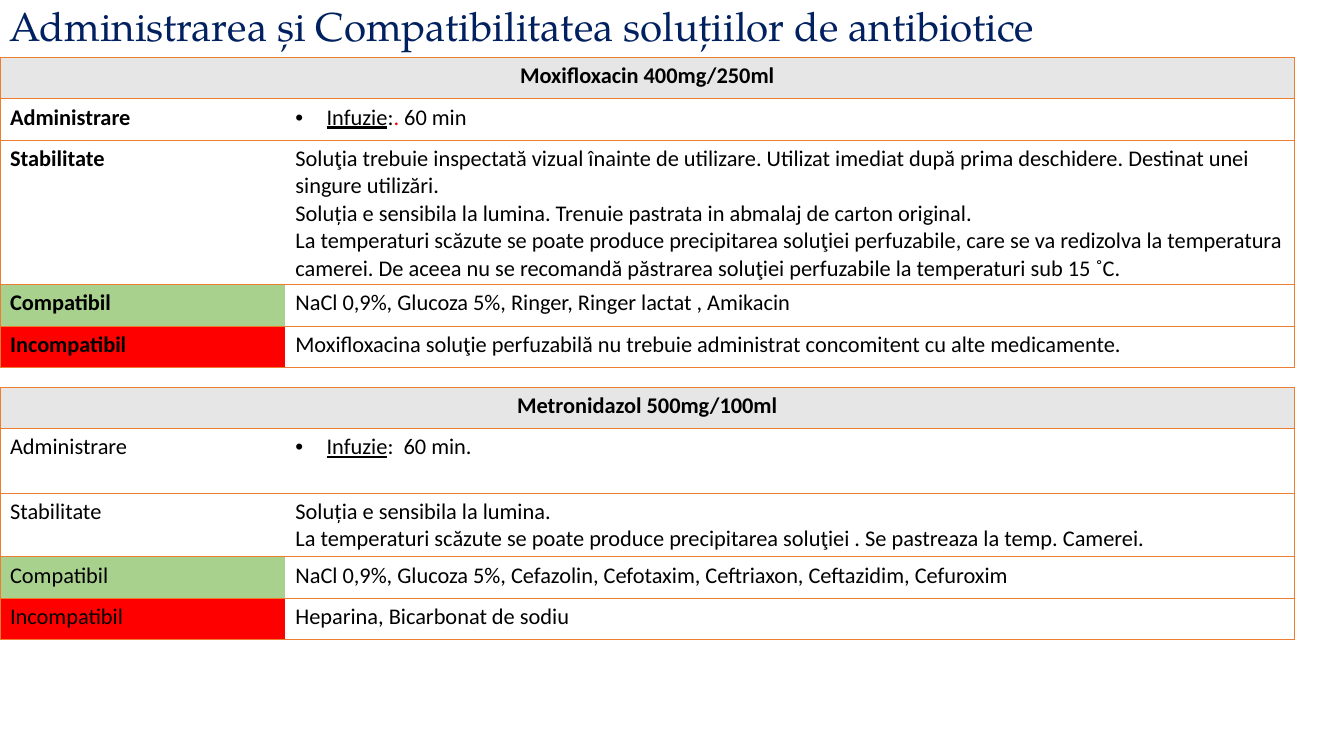
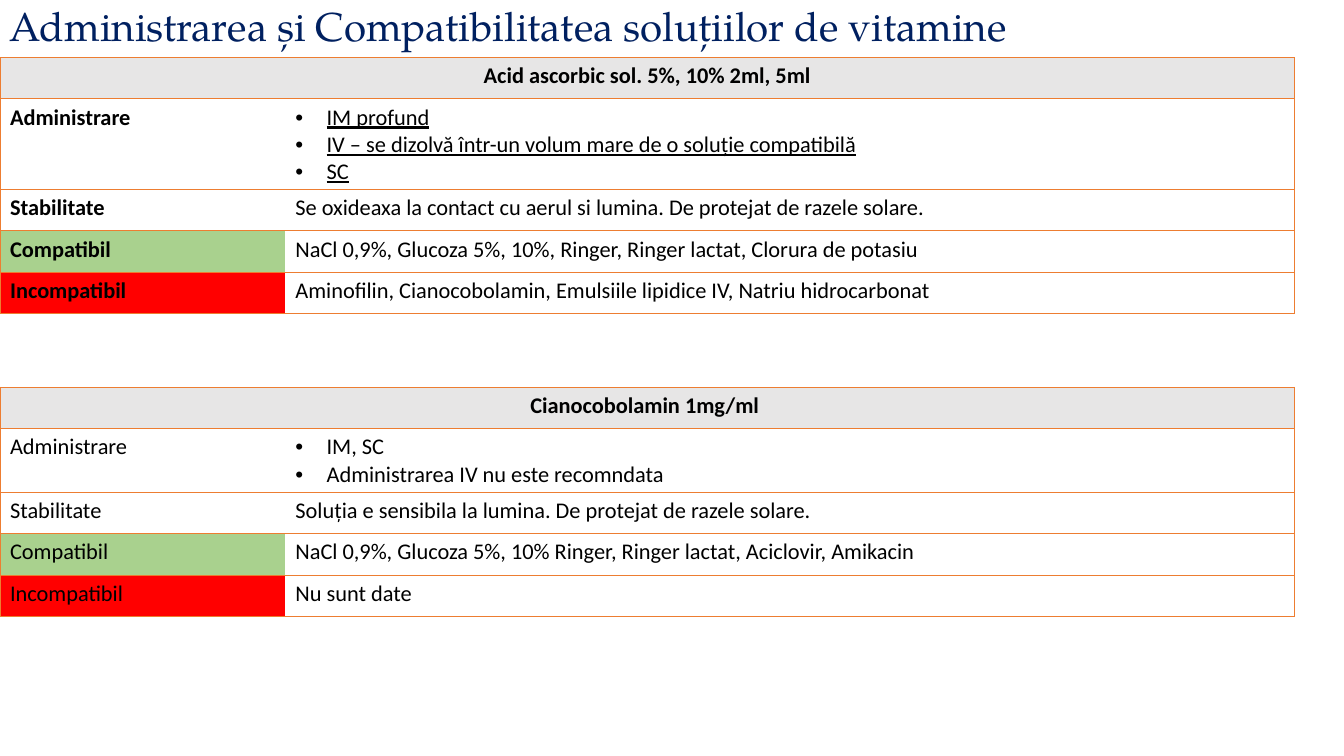
"""Build two slides on the administration and compatibility of injectable solutions."""
from dataclasses import dataclass

from lxml import etree
from pptx import Presentation
from pptx.dml.color import RGBColor
from pptx.enum.text import MSO_ANCHOR, PP_ALIGN
from pptx.oxml.ns import qn
from pptx.util import Inches, Pt

NAVY = RGBColor(0x00, 0x20, 0x60)
BLACK = RGBColor(0x00, 0x00, 0x00)
GREY = RGBColor(0xE7, 0xE6, 0xE6)
GREEN = RGBColor(0xA9, 0xD1, 0x8E)
RED = RGBColor(0xFF, 0x00, 0x00)
ORANGE = RGBColor(0xED, 0x7D, 0x31)

TITLE_FONT = "TeX Gyre Pagella"
BODY_FONT = "Calibri"
TITLE_HEIGHT = 0.57
TABLE_TOPS = (TITLE_HEIGHT, 3.84)
COLUMN_WIDTHS = (2.83, 10.01)
ROW_HEIGHT = 0.41
BULLET_INDENT = Inches(0.31)
LABELS = ("Administrare", "Stabilitate", "Compatibil", "Incompatibil")
LABEL_FILLS = {"Compatibil": GREEN, "Incompatibil": RED}


@dataclass
class Run:
    """A piece of text with its own look."""
    text: str
    underline: bool = False
    color: RGBColor = BLACK


@dataclass
class Drug:
    """The content of one table."""
    name: str
    administration: list
    stability: list
    compatible: str
    incompatible: str
    bold_labels: bool = False
    administration_height: float = ROW_HEIGHT


ANTIBIOTICS = (
    Drug(
        "Moxifloxacin 400mg/250ml",
        [[Run("Infuzie", True), Run(":"), Run(". ", color=RED), Run("60 min")]],
        [
            "Soluţia trebuie inspectată vizual înainte de utilizare. Utilizat imediat "
            "după prima deschidere. Destinat unei singure utilizări.",
            "Soluția e sensibila la lumina. Trenuie pastrata in abmalaj de carton original.",
            "La temperaturi scăzute se poate produce precipitarea soluţiei perfuzabile, "
            "care se va redizolva la temperatura camerei. De aceea nu se recomandă "
            "păstrarea soluţiei perfuzabile la temperaturi sub 15 ˚C.",
        ],
        "NaCl 0,9%, Glucoza 5%, Ringer, Ringer lactat , Amikacin",
        "Moxifloxacina soluţie perfuzabilă nu trebuie administrat concomitent cu alte medicamente.",
        bold_labels=True,
    ),
    Drug(
        "Metronidazol 500mg/100ml",
        [[Run("Infuzie", True), Run(":  60 min.")]],
        [
            "Soluția e sensibila la lumina.",
            "La temperaturi scăzute se poate produce precipitarea soluţiei . "
            "Se pastreaza la temp. Camerei.",
        ],
        "NaCl 0,9%, Glucoza 5%, Cefazolin, Cefotaxim, Ceftriaxon, Ceftazidim, Cefuroxim",
        "Heparina, Bicarbonat de sodiu",
        administration_height=0.64,
    ),
)

VITAMINS = (
    Drug(
        "Acid ascorbic sol. 5%, 10% 2ml, 5ml",
        [
            [Run("IM profund", True)],
            [Run("IV – se dizolvă într-un volum mare de o soluție compatibilă", True)],
            [Run("SC", True)],
        ],
        ["Se oxideaxa la contact cu aerul si lumina. De protejat de razele solare."],
        "NaCl 0,9%, Glucoza 5%, 10%, Ringer, Ringer lactat, Clorura de potasiu",
        "Aminofilin, Cianocobolamin, Emulsiile lipidice IV, Natriu hidrocarbonat",
        bold_labels=True,
    ),
    Drug(
        "Cianocobolamin 1mg/ml ",
        [[Run("IM, SC")], [Run("Administrarea IV nu este recomndata")]],
        ["Soluția e sensibila la lumina. De protejat de razele solare."],
        "NaCl 0,9%, Glucoza 5%, 10% Ringer, Ringer lactat, Aciclovir, Amikacin",
        "Nu sunt date",
    ),
)


def format_run(r, size, font, color, bold=False, underline=False):
    """Set the font of a run."""
    r.font.size = Pt(size)
    r.font.name = font
    r.font.color.rgb = color
    r.font.bold = bold
    r.font.underline = underline


def add_title(s, text):
    """Add the slide title."""
    sp = s.shapes.add_textbox(0, 0, Inches(11.5), Inches(TITLE_HEIGHT))
    tf = sp.text_frame
    tf.word_wrap = True
    tf.vertical_anchor = MSO_ANCHOR.MIDDLE
    p = tf.paragraphs[0]
    p.text = text
    p.line_spacing = 0.9
    format_run(p.runs[0], 28.8, TITLE_FONT, NAVY)


def add_bullet(p):
    """Give a paragraph a hanging bullet."""
    pPr = p._p.get_or_add_pPr()
    pPr.set("marL", str(BULLET_INDENT))
    pPr.set("indent", str(-BULLET_INDENT))
    etree.SubElement(pPr, qn("a:buFont")).set("typeface", "Arial")
    etree.SubElement(pPr, qn("a:buChar")).set("char", "•")


def set_borders(cell, sides):
    """Draw the named sides of a cell and clear the others."""
    tcPr = cell._tc.get_or_add_tcPr()
    for i, side in enumerate("LRTB"):
        ln = etree.Element(qn(f"a:ln{side}"), w=str(Pt(0.5)))
        if side in sides:
            fill = etree.SubElement(ln, qn("a:solidFill"))
            etree.SubElement(fill, qn("a:srgbClr")).set("val", str(ORANGE))
        else:
            etree.SubElement(ln, qn("a:noFill"))
        tcPr.insert(i, ln)


def set_fill(cell, color=None):
    """Fill a cell, or leave it clear."""
    if color is None:
        cell.fill.background()
    else:
        cell.fill.solid()
        cell.fill.fore_color.rgb = color


def write_cell(cell, paragraphs, bold=False, bullets=False):
    """Write paragraphs, each a string or a list of runs, into a cell."""
    tf = cell.text_frame
    for i, content in enumerate(paragraphs):
        p = tf.add_paragraph() if i else tf.paragraphs[0]
        if bullets:
            add_bullet(p)
        for part in [Run(content)] if isinstance(content, str) else content:
            r = p.add_run()
            r.text = part.text
            format_run(r, 16, BODY_FONT, part.color, bold, part.underline)


def add_drug_table(s, drug, top):
    """Add the table of one drug."""
    heights = [ROW_HEIGHT] * (len(LABELS) + 1)
    heights[1] = drug.administration_height
    table = s.shapes.add_table(
        len(heights), len(COLUMN_WIDTHS), 0, Inches(top),
        Inches(sum(COLUMN_WIDTHS)), Inches(sum(heights)),
    ).table
    table.first_row = table.horz_banding = False
    for column, width in zip(table.columns, COLUMN_WIDTHS):
        column.width = Inches(width)
    for row, height in zip(table.rows, heights):
        row.height = Inches(height)

    header = table.cell(0, 0)
    header.merge(table.cell(0, 1))
    write_cell(header, [drug.name], bold=True)
    header.text_frame.paragraphs[0].alignment = PP_ALIGN.CENTER
    for cell in table.rows[0].cells:
        set_fill(cell, GREY)
        set_borders(cell, "LRTB")

    details = (drug.administration, drug.stability, [drug.compatible], [drug.incompatible])
    for i, (label, detail) in enumerate(zip(LABELS, details), start=1):
        label_cell, detail_cell = table.cell(i, 0), table.cell(i, 1)
        write_cell(label_cell, [label], bold=drug.bold_labels)
        set_fill(label_cell, LABEL_FILLS.get(label))
        set_borders(label_cell, "LTB")
        write_cell(detail_cell, detail, bullets=label == "Administrare")
        set_fill(detail_cell)
        set_borders(detail_cell, "RTB")


def add_drug_slide(prs, subject, drugs):
    """Add a slide with a title and one table per drug."""
    s = prs.slides.add_slide(prs.slide_layouts[6])
    add_title(s, f"Administrarea și Compatibilitatea soluțiilor de {subject}")
    for drug, top in zip(drugs, TABLE_TOPS):
        add_drug_table(s, drug, top)


def main():
    """Build and save the presentation."""
    prs = Presentation()
    prs.slide_width = Inches(13.33)
    prs.slide_height = Inches(7.5)
    add_drug_slide(prs, "antibiotice", ANTIBIOTICS)
    add_drug_slide(prs, "vitamine", VITAMINS)
    prs.save("out.pptx")


if __name__ == "__main__":
    main()
